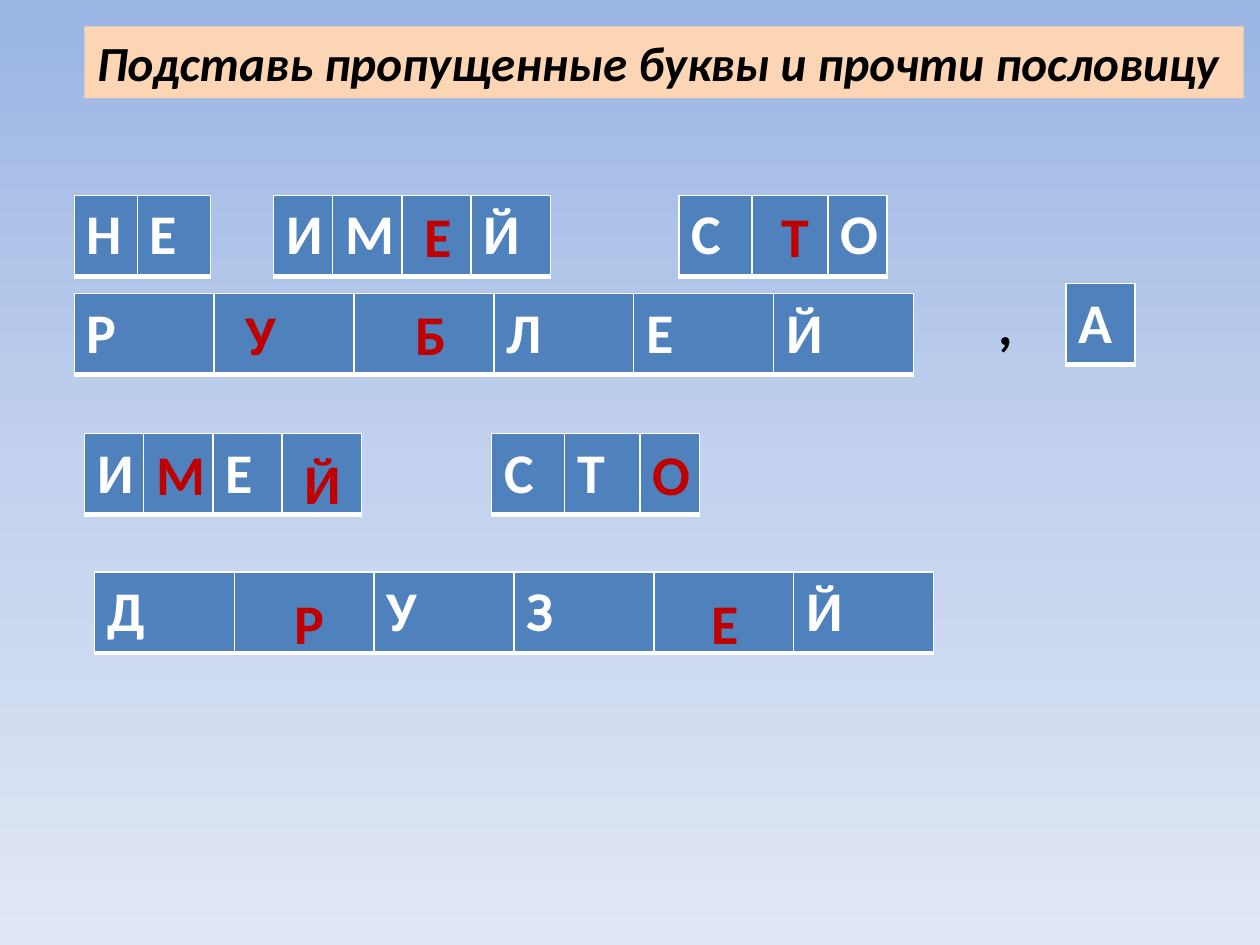
from copy import deepcopy
from dataclasses import dataclass

from lxml.etree import SubElement
from pptx import Presentation
from pptx.dml.color import RGBColor
from pptx.enum.shapes import MSO_SHAPE
from pptx.enum.text import PP_ALIGN
from pptx.oxml.ns import qn
from pptx.util import Inches, Pt

TITLE = "Подставь пропущенные буквы и прочти пословицу"
GAP = "_"
FOUR = [0.47, 0.55, 0.55, 0.63]
THREE = [0.58, 0.6, 0.47]
SIX = [1.11] * 6

WORDS = [
    ("НЕ", 0.59, 1.55, [0.5, 0.58]),
    ("ИМ_Й", 2.17, 1.55, FOUR),
    ("С_О", 5.39, 1.55, THREE),
    ("Р__ЛЕЙ", 0.59, 2.33, SIX),
    ("А", 8.46, 2.25, [0.55]),
    ("И_Е_", 0.67, 3.44, FOUR),
    ("СТ_", 3.9, 3.44, THREE),
    ("Д_УЗ_Й", 0.75, 4.54, SIX),
]
MISSING_LETTERS = [
    ("Е", 3.27, 1.55, 0.42),
    ("Т", 6.1, 1.55, 0.42),
    ("У", 1.85, 2.33, 0.45),
    ("Б", 3.2, 2.33, 0.46),
    ("М", 1.14, 3.44, 0.59),
    ("Й", 2.32, 3.51, 0.49),
    ("О", 5.08, 3.44, 0.51),
    ("Р", 2.24, 4.62, 0.44),
    ("Е", 5.55, 4.62, 0.42),
]
COMMA = (",", 7.83, 2.25, 0.37)


@dataclass(frozen=True)
class Theme:
    font: str = "Calibri"
    title_size: int = 28
    letter_size: int = 32
    black: str = "000000"
    white: str = "FFFFFF"
    red: str = "C00000"
    cell: str = "4F81BD"
    banner: str = "FCD5B5"
    sky: tuple = ((0, "9AB5E4"), (0.5, "C2D1ED"), (1, "E1E8F5"))


THEME = Theme()
CELL_HEIGHT = 0.63
BORDERS = {"a:lnL": 1, "a:lnR": 1, "a:lnT": 1, "a:lnB": 3}


def write(frame, text, color=THEME.black, size=THEME.letter_size, italic=False):
    frame.word_wrap = True
    para = frame.paragraphs[0]
    para.alignment = PP_ALIGN.LEFT
    span = para.add_run()
    span.text = text
    span.font.name = THEME.font
    span.font.size = Pt(size)
    span.font.bold = True
    span.font.italic = italic
    span.font.color.rgb = RGBColor.from_string(color)


def paint_background(page):
    fill = page.background.fill
    fill.gradient()
    fill.gradient_angle = 270
    stop_list = next(page.element.iter(qn("a:gsLst")))
    stop_list.insert(1, deepcopy(stop_list[0]))
    for stop, (position, color) in zip(fill.gradient_stops, THEME.sky):
        stop.position = position
        stop.color.rgb = RGBColor.from_string(color)


def add_borders(cell):
    properties = cell._tc.get_or_add_tcPr()
    for index, (tag, width) in enumerate(BORDERS.items()):
        line = SubElement(properties, qn(tag), w=str(Pt(width)))
        solid = SubElement(line, qn("a:solidFill"))
        SubElement(solid, qn("a:srgbClr"), val=THEME.white)
        properties.insert(index, line)


def add_word(page, letters, left, top, widths):
    table = page.shapes.add_table(
        1, len(letters), Inches(left), Inches(top),
        Inches(sum(widths)), Inches(CELL_HEIGHT),
    ).table
    for column, width in zip(table.columns, widths):
        column.width = Inches(width)
    for cell, letter in zip(table.rows[0].cells, letters):
        cell.fill.solid()
        cell.fill.fore_color.rgb = RGBColor.from_string(THEME.cell)
        add_borders(cell)
        if letter != GAP:
            write(cell.text_frame, letter, color=THEME.white)


def add_letter(page, text, left, top, width, color):
    box = page.shapes.add_textbox(
        Inches(left), Inches(top), Inches(width), Inches(0.64)
    )
    write(box.text_frame, text, color=color)


def add_title(page):
    banner = page.shapes.add_shape(
        MSO_SHAPE.RECTANGLE, Inches(0.67), Inches(0.21), Inches(9.2), Inches(0.57)
    )
    banner.shadow.inherit = False
    banner.fill.solid()
    banner.fill.fore_color.rgb = RGBColor.from_string(THEME.banner)
    banner.line.fill.background()
    write(banner.text_frame, TITLE, size=THEME.title_size, italic=True)


def main():
    deck = Presentation()
    deck.slide_width, deck.slide_height = Inches(10), Inches(7.5)
    page = deck.slides.add_slide(deck.slide_layouts[6])
    paint_background(page)
    for word in WORDS:
        add_word(page, *word)
    add_letter(page, *COMMA, color=THEME.black)
    for letter in MISSING_LETTERS:
        add_letter(page, *letter, color=THEME.red)
    add_title(page)
    deck.save("out.pptx")


if __name__ == "__main__":
    main()
